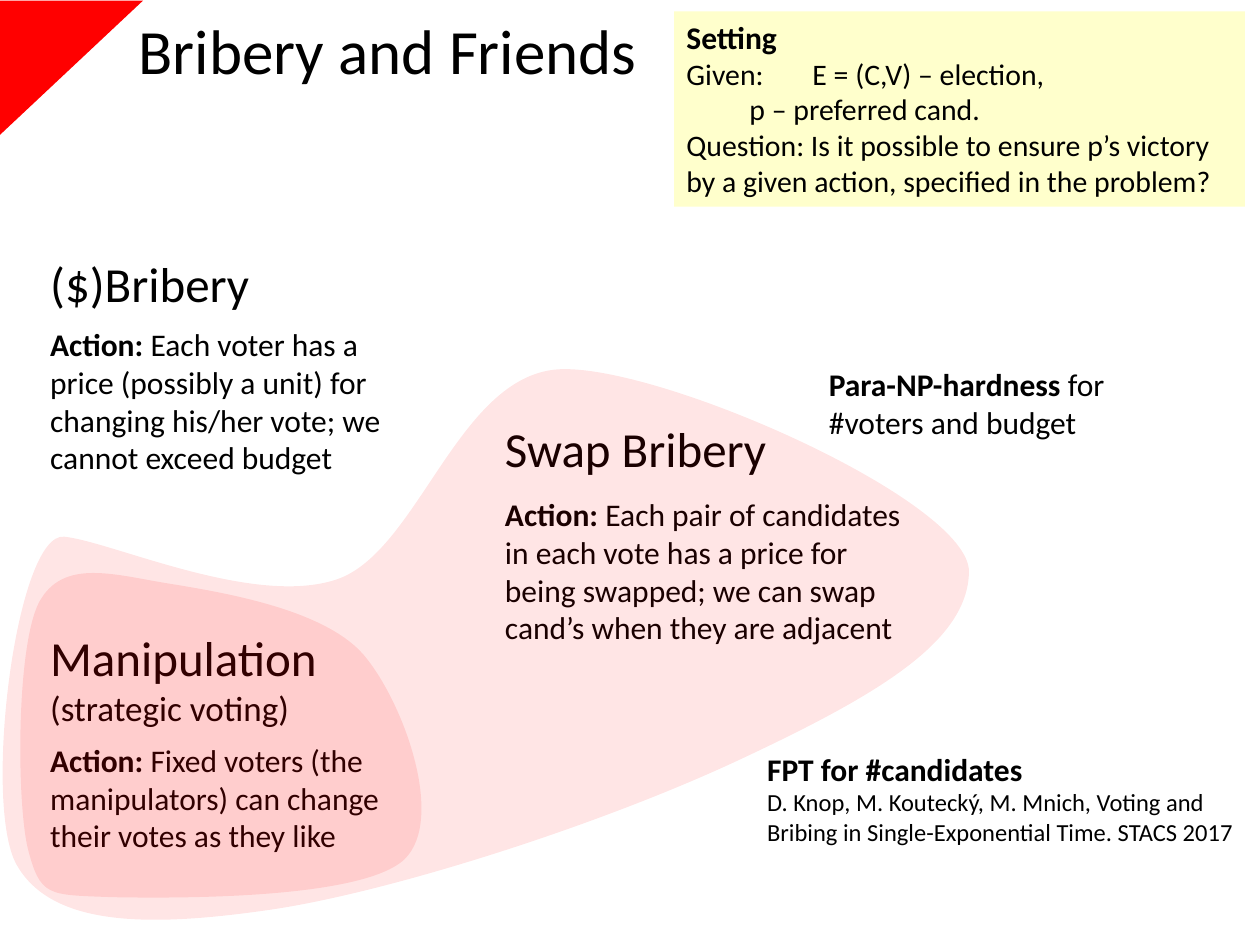
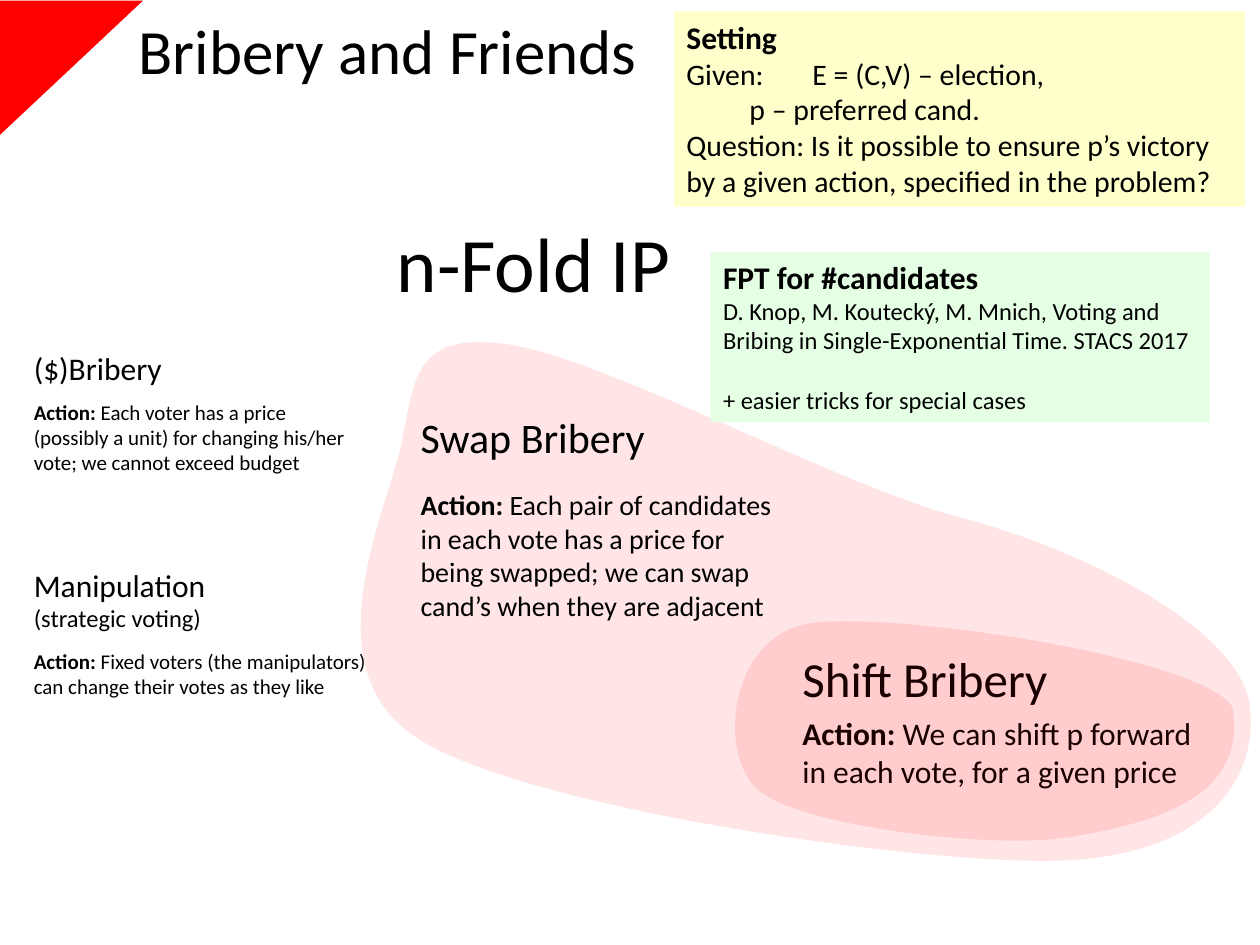
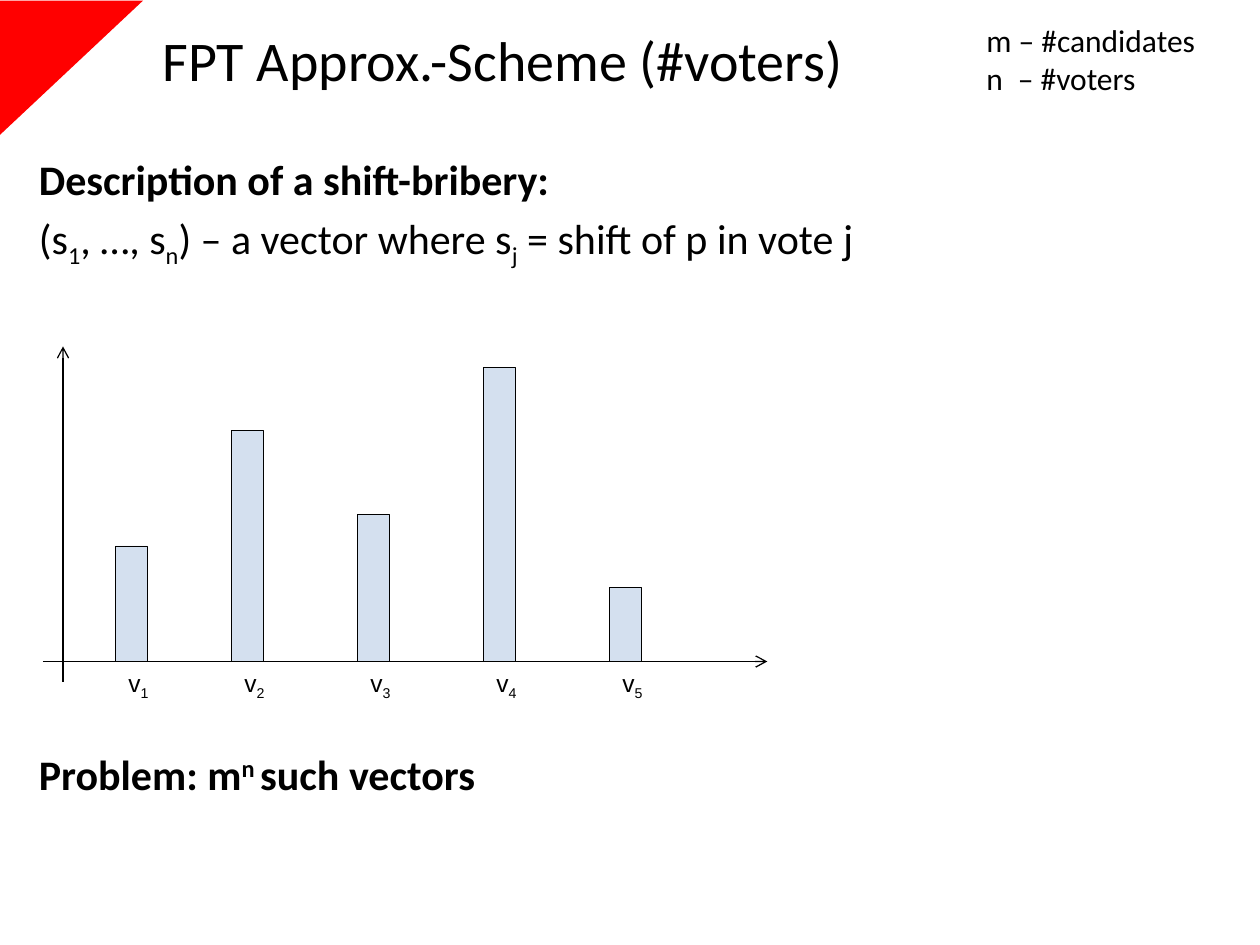
import pptx
import pptx.util
import pptx.dml.color
import pptx.enum.shapes
import pptx.enum.text
import pptx.oxml
import pptx.oxml.ns
from pptx.util import Inches

qn = pptx.oxml.ns.qn
SHAPES = pptx.enum.shapes.MSO_SHAPE

# Shared look
BLACK, RED, YELLOW, GREEN, BLUE = "000000", "FF0000", "FFFFCC", "E5FFE5", "95B3D7"
TITLE_FONT = BODY_FONT = "Calibri"
LABEL_FONT = "Arial"

# Shared wording
BOLD, PLAIN = {"bold": True}, {"bold": False}
SUB, SUPER = {"baseline": -25}, {"baseline": 30}
HEADINGS = {
    "bribery": "($)Bribery",
    "manipulation": "Manipulation",
    "swap": "Swap Bribery",
    "shift": "Shift Bribery",
}
ACTIONS = {
    "bribery": "Each voter has a price (possibly a unit) for changing "
               "his/her vote; we cannot exceed budget",
    "manipulation": "Fixed voters (the manipulators) can change their votes as they like",
    "swap": "Each pair of candidates in each vote has a price for being swapped; "
            "we can swap cand’s when they are adjacent",
    "shift": "We can shift p forward in each vote, for a given price",
}
FPT_RESULT = [
    [("FPT for #candidates", BOLD)],
    [("D. Knop, M. Koutecký, M. Mnich, Voting and Bribing in "
      "Single-Exponential Time. STACS 2017", {"size": 14})],
]

# Blob outlines: a start point, then cubic curves (two handles and an end point)
MANIPULATION_BLOB = ((1.33, 4.63), [
    ((0.9, 4.56), (0.5, 4.43), (0.31, 4.78)),
    ((0.13, 5.13), (0.13, 6.34), (0.22, 6.73)),
    ((0.32, 7.12), (0.38, 7.1), (0.88, 7.12)),
    ((1.38, 7.13), (2.87, 7.14), (3.21, 6.82)),
    ((3.54, 6.5), (3.2, 5.56), (2.88, 5.19)),
    ((2.56, 4.83), (1.76, 4.7), (1.33, 4.63)),
])
SWAP_AND_MANIPULATION_BLOB = ((2.67, 4.6), [
    ((2.01, 4.82), (0.89, 4.3), (0.51, 4.26)),
    ((0.13, 4.22), (-0.14, 6.37), (0.13, 6.86)),
    ((0.41, 7.36), (1.19, 7.36), (2.15, 7.22)),
    ((3.1, 7.08), (4.76, 6.55), (5.87, 6.03)),
    ((6.98, 5.51), (7.68, 5.09), (7.69, 4.54)),
    ((7.7, 3.99), (5.31, 2.92), (4.47, 2.93)),
    ((3.64, 2.94), (3.33, 4.38), (2.67, 4.6)),
])
SWAP_AND_SHIFT_BLOB = ((4.01, 2.73), [
    ((3.27, 2.63), (3.29, 3.03), (3.18, 3.55)),
    ((3.06, 4.08), (2.45, 5.33), (3.33, 5.87)),
    ((4.2, 6.42), (7.33, 6.87), (8.43, 6.83)),
    ((9.53, 6.79), (9.99, 6.22), (9.92, 5.61)),
    ((9.86, 5.01), (8.63, 4.37), (7.63, 4.11)),
    ((6.64, 3.85), (4.76, 2.82), (4.01, 2.73)),
])
SHIFT_BLOB = ((6.41, 4.95), [
    ((5.79, 5.06), (5.68, 6), (6.03, 6.28)),
    ((6.38, 6.56), (7.89, 6.75), (8.52, 6.64)),
    ((9.14, 6.53), (9.91, 6.34), (9.78, 5.61)),
    ((9.53, 5.21), (7.04, 4.84), (6.41, 4.95)),
])


# Basic helpers
def color(hex_string):
    return pptx.dml.color.RGBColor.from_string(hex_string)


def emu_box(box):
    return [Inches(length) for length in box]


def write_text(frame, paragraphs, size=18, font=BODY_FONT, bold=False, space_before=0):
    """Fill a frame; a paragraph is a list of strings or (string, format) pairs."""
    frame.word_wrap = True
    for index, pieces in enumerate(paragraphs):
        paragraph = frame.paragraphs[0] if index == 0 else frame.add_paragraph()
        paragraph.alignment = pptx.enum.text.PP_ALIGN.LEFT
        if space_before:
            paragraph.space_before = pptx.util.Pt(space_before)
        for piece in pieces:
            text, style = (piece, {}) if isinstance(piece, str) else piece
            run = paragraph.add_run()
            run.text = text
            run.font.name = font
            run.font.size = pptx.util.Pt(style.get("size", size))
            run.font.bold = style.get("bold", bold)
            run.font.color.rgb = color(BLACK)
            if "baseline" in style:
                run.font._element.set("baseline", str(style["baseline"] * 1000))


def add_text(slide, box, paragraphs, **text_format):
    frame = slide.shapes.add_textbox(*emu_box(box)).text_frame
    write_text(frame, paragraphs, **text_format)
    return frame


def paint(shape, fill, opacity=None, line_width=None):
    shape.shadow.inherit = False
    shape.fill.solid()
    shape.fill.fore_color.rgb = color(fill)
    if opacity is not None:
        alpha = pptx.oxml.parse_xml(
            f'<a:alpha {pptx.oxml.ns.nsdecls("a")} val="{opacity * 1000}"/>')
        shape.element.spPr.find(".//" + qn("a:srgbClr")).append(alpha)
    if line_width is None:
        shape.line.fill.background()
    else:
        shape.line.color.rgb = color(BLACK)
        shape.line.width = pptx.util.Pt(line_width)


def add_panel(slide, box, fill, paragraphs, **text_format):
    panel = slide.shapes.add_shape(SHAPES.RECTANGLE, *emu_box(box))
    paint(panel, fill)
    panel.text_frame.vertical_anchor = pptx.enum.text.MSO_ANCHOR.TOP
    write_text(panel.text_frame, paragraphs, **text_format)
    return panel


def curve_point(points, t):
    weights = ((1 - t) ** 3, 3 * t * (1 - t) ** 2, 3 * t ** 2 * (1 - t), t ** 3)
    return tuple(Inches(sum(w * point[axis] for w, point in zip(weights, points)))
                 for axis in (0, 1))


def add_blob(slide, blob):
    """Size a freeform from points along its curves, then make its segments curves."""
    start, curves = blob
    starts = [start] + [curve[-1] for curve in curves]
    samples = [curve_point((first, *curve), step / 20)
               for first, curve in zip(starts, curves) for step in range(1, 21)]
    builder = slide.shapes.build_freeform(*(Inches(value) for value in start))
    builder.add_line_segments(samples, close=True)
    shape = builder.convert_to_shape()
    outline = shape.element.find(".//" + qn("a:path"))
    for segment in outline.findall(qn("a:lnTo")):
        outline.remove(segment)
    close = outline.find(qn("a:close"))
    for curve in curves:
        points = "".join(
            f'<a:pt x="{Inches(x) - shape.left}" y="{Inches(y) - shape.top}"/>'
            for x, y in curve)
        close.addprevious(pptx.oxml.parse_xml(
            f'<a:cubicBezTo {pptx.oxml.ns.nsdecls("a")}>{points}</a:cubicBezTo>'))
    paint(shape, RED, opacity=10)


def add_arrow(slide, start, end):
    ends = emu_box((*start, *end))
    arrow = slide.shapes.add_connector(pptx.enum.shapes.MSO_CONNECTOR.STRAIGHT, *ends)
    arrow.line.color.rgb = color(BLACK)
    arrow.line.width = pptx.util.Pt(0.75)
    properties = arrow.element.spPr
    namespace = pptx.oxml.ns.nsdecls("a")
    properties.find(qn("a:ln")).append(
        pptx.oxml.parse_xml(f'<a:tailEnd {namespace} type="arrow"/>'))
    properties.append(pptx.oxml.parse_xml(f"<a:effectLst {namespace}/>"))


# Shared regions
def add_titled_slide(presentation, title, box, size):
    slide = presentation.slides.add_slide(presentation.slide_layouts[5])
    corner = slide.shapes.add_shape(
        SHAPES.RIGHT_TRIANGLE, *emu_box((0.03, -0.03, 1.07, 1.14)))
    corner.rotation = 90
    paint(corner, RED)
    placeholder = slide.shapes.title
    placeholder.left, placeholder.top, placeholder.width, placeholder.height = emu_box(box)
    frame = placeholder.text_frame
    frame.auto_size = pptx.enum.text.MSO_AUTO_SIZE.NONE
    frame.vertical_anchor = pptx.enum.text.MSO_ANCHOR.MIDDLE
    write_text(frame, [[title]], size=size, font=TITLE_FONT)
    return slide


def add_bribery_slide(presentation):
    slide = add_titled_slide(presentation, "Bribery and Friends", (1, 0, 4.47, 0.79), 36)
    add_panel(slide, (5.35, 0.09, 4.53, 1.55), YELLOW, [
        [("Setting", {"size": 18, "bold": True})],
        ["Given: \tE = (C,V) – election,"],
        ["\tp – preferred cand."],
        ["Question: Is it possible to ensure p’s victory by a given action, "
         "specified in the problem?"],
    ], size=17)
    return slide


def add_problem(slide, box, name, heading_size, action_size, gap, note_size=None):
    """Heading at the top of the box, action text a gap below it."""
    left, top, width, height = box
    heading = [[HEADINGS[name]]]
    if note_size:
        heading.append([("(strategic voting)", {"size": note_size})])
    add_text(slide, (left, top, width, gap), heading, size=heading_size)
    add_text(slide, (left, top + gap, width, height - gap),
             [[("Action: ", BOLD), ACTIONS[name]]], size=action_size)


def add_bar_diagram(slide, box):
    left, top, width, height = box
    base = top + 2.5
    add_arrow(slide, (left + 0.16, top + height), (left + 0.16, top))
    add_arrow(slide, (left, base), (left + width, base))
    bar_offsets = (0.58, 1.5, 2.5, 3.5, 4.5)
    shifts = (11, 22, 14, 28, 7)
    for number, (offset, shift) in enumerate(zip(bar_offsets, shifts), start=1):
        bar_left, bar_height = left + offset, shift / 12
        bar = slide.shapes.add_shape(
            SHAPES.RECTANGLE, *emu_box((bar_left, base - bar_height, 0.25, bar_height)))
        paint(bar, BLUE, opacity=40, line_width=0.5)
        add_text(slide, (bar_left, base, 0.42, 0.33),
                 [["v", (str(number), SUB)]], size=14, font=LABEL_FONT)


# Slides
def build_overview(presentation):
    slide = add_bribery_slide(presentation)
    add_problem(slide, (0.3, 4.93, 2.96, 1.91), "manipulation", 28, 18, 0.9, note_size=20)
    add_problem(slide, (0.3, 1.96, 2.96, 1.88), "bribery", 28, 18, 0.57)
    add_problem(slide, (3.91, 3.27, 3.47, 1.92), "swap", 28, 18, 0.61)
    add_blob(slide, MANIPULATION_BLOB)
    add_blob(slide, SWAP_AND_MANIPULATION_BLOB)
    add_text(slide, (6.48, 2.85, 3.06, 0.71),
             [[("Para-NP-hardness", BOLD), " for #voters and budget"]])
    add_text(slide, (5.99, 5.9, 3.96, 0.88), FPT_RESULT)


def build_n_fold(presentation):
    slide = add_bribery_slide(presentation)
    add_blob(slide, SWAP_AND_SHIFT_BLOB)
    add_problem(slide, (0.17, 4.44, 2.84, 1.16), "manipulation", 18, 12, 0.66, note_size=14)
    add_problem(slide, (0.17, 2.72, 2.74, 1.11), "bribery", 18, 12, 0.4)
    add_problem(slide, (3.24, 3.22, 3.03, 1.78), "swap", 24, 16, 0.6)
    add_problem(slide, (6.27, 5.1, 3.47, 1.23), "shift", 28, 18, 0.52)
    add_blob(slide, SHIFT_BLOB)
    tricks = [("+ easier tricks for special cases", {"size": 14})]
    panel = add_panel(slide, (5.64, 2, 3.96, 1.35), GREEN, FPT_RESULT + [tricks])
    panel.text_frame.paragraphs[-1].space_before = pptx.util.Pt(17)
    add_text(slide, (3.05, 1.66, 2.4, 0.84), [["n-Fold IP"]], size=44)


def build_approximation(presentation):
    slide = add_titled_slide(
        presentation, "FPT Approx.-Scheme (#voters)", (1.19, 0, 6.4, 0.94), 32)
    add_text(slide, (0.21, 1.17, 9.45, 1.1), [
        [("Description of a shift-bribery:", BOLD)],
        ["(s", ("1", SUB), ", …, s", ("n", SUB), ") – a vector where s",
         ("j", SUB), " = shift of p in vote j"],
    ], size=24, space_before=4.8)
    add_bar_diagram(slide, (0.34, 2.75, 5.75, 2.66))
    add_text(slide, (0.21, 5.89, 9.45, 0.55),
             [["Problem: m", ("n ", SUPER), "such vectors"]],
             size=24, bold=True, space_before=4.8)
    # Legend, with a tab stop that lines up the dashes
    legend = add_text(slide, (7.73, 0.12, 1.94, 0.71),
                      [["m – #candidates"], ["n\t– #voters"]])
    legend.paragraphs[1]._p.get_or_add_pPr().append(pptx.oxml.parse_xml(
        f'<a:tabLst {pptx.oxml.ns.nsdecls("a")}>'
        f'<a:tab pos="{Inches(0.25)}" algn="l"/></a:tabLst>'))


def main():
    presentation = pptx.Presentation()
    presentation.slide_width, presentation.slide_height = Inches(10), Inches(7.5)
    build_overview(presentation)
    build_n_fold(presentation)
    build_approximation(presentation)
    presentation.save("out.pptx")


if __name__ == "__main__":
    main()
